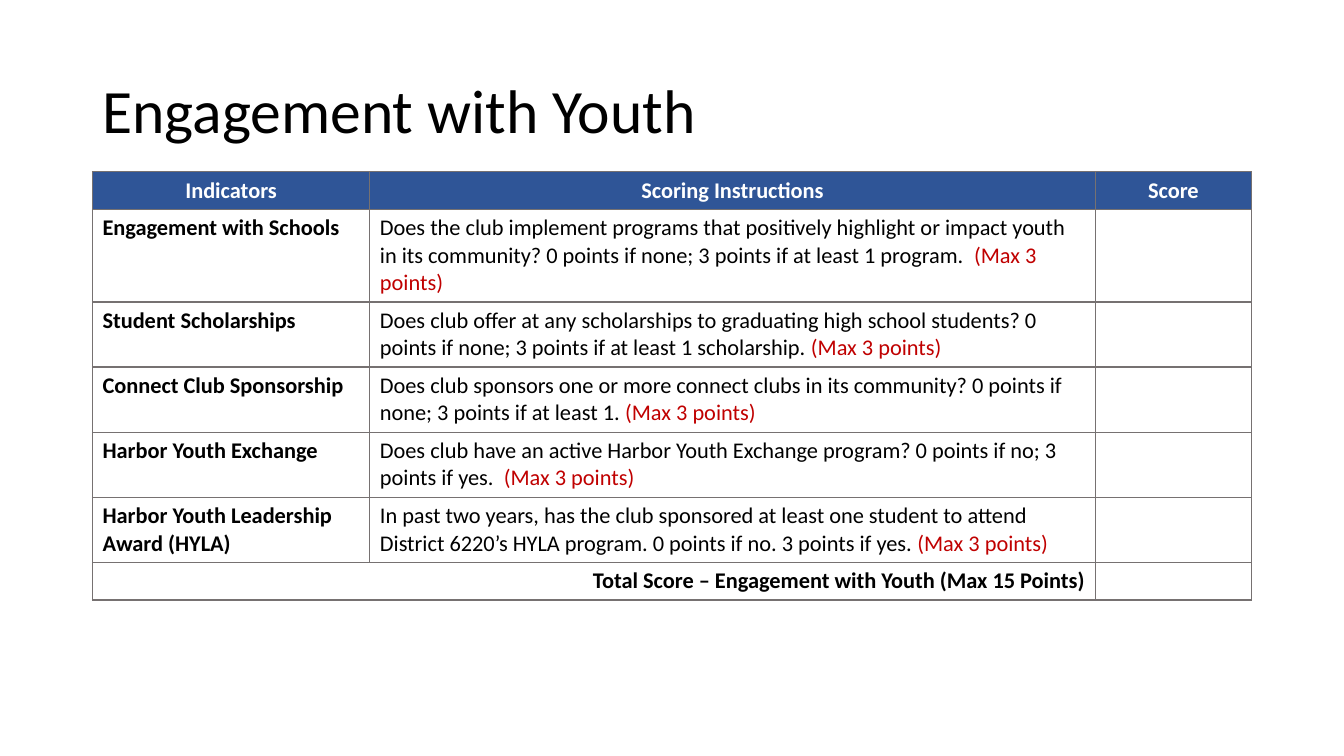
from lxml import etree
from pptx import Presentation
from pptx.dml.color import RGBColor as Rgb
from pptx.enum.text import MSO_ANCHOR as Anchor, PP_ALIGN as Align
from pptx.oxml.ns import qn
from pptx.util import Cm, Pt

TITLE = "Engagement with Youth"
HEADS = ("Indicators", "Scoring Instructions", "Score")
LIMIT = "(Max 3 points)"
ITEMS = [
    ("Engagement with Schools",
     "Does the club implement programs that positively highlight or impact "
     "youth in its community? 0 points if none; 3 points if at least "
     "1 program.  "),
    ("Student Scholarships",
     "Does club offer at any scholarships to graduating high school students? "
     "0 points if none; 3 points if at least 1 scholarship. "),
    ("Connect Club Sponsorship",
     "Does club sponsors one or more connect clubs in its community? "
     "0 points if none; 3 points if at least 1. "),
    ("Harbor Youth Exchange",
     "Does club have an active Harbor Youth Exchange program? "
     "0 points if no; 3 points if yes.  "),
    ("Harbor Youth Leadership Award (HYLA)",
     "In past two years, has the club sponsored at least one student to attend "
     "District 6220’s HYLA program. 0 points if no. 3 points if yes. "),
]
TOTAL = "Total Score – Engagement with Youth (Max 15 Points)"

COLORS = {"head": "2F5597", "light": "FFFFFF", "text": "000000",
          "limit": "C00000", "line": "767171"}
FONT = "Calibri"
SIZE = 16
LEFT, WIDTH = 2.33, 29.21
COLS = (6.99, 18.28, 3.94)
ROWS = [0.95, 2.33] + [1.64] * 4 + [0.95]


def write(para, text, color="text", bold=False, size=SIZE):
    run = para.add_run()
    run.text = text
    font = run.font
    font.name, font.size, font.bold = FONT, Pt(size), bold
    font.color.rgb = Rgb.from_string(COLORS[color])


def frame(cell):
    """Put a thin line on all four sides of a cell, beneath its fill."""
    props = cell._tc.get_or_add_tcPr()
    for place, side in enumerate(("lnL", "lnR", "lnT", "lnB")):
        line = etree.Element(qn("a:" + side), w=str(Pt(1)))
        fill = etree.SubElement(line, qn("a:solidFill"))
        etree.SubElement(fill, qn("a:srgbClr"), val=COLORS["line"])
        props.insert(place, line)


def main():
    deck = Presentation()
    deck.slide_width, deck.slide_height = Cm(33.87), Cm(19.05)
    slide = deck.slides.add_slide(deck.slide_layouts[6])

    box = slide.shapes.add_textbox(Cm(LEFT), Cm(1.01), Cm(WIDTH), Cm(3.68))
    box.text_frame.word_wrap = True
    box.text_frame.vertical_anchor = Anchor.MIDDLE
    title = box.text_frame.paragraphs[0]
    title.line_spacing = 0.9
    write(title, TITLE, size=44)

    table = slide.shapes.add_table(
        len(ROWS), len(COLS), Cm(LEFT), Cm(4.33), Cm(WIDTH), Cm(sum(ROWS))).table
    table.horz_banding = False
    for col, width in zip(table.columns, COLS):
        col.width = Cm(width)
    for row, height in zip(table.rows, ROWS):
        row.height = Cm(height)

    for cell in table.iter_cells():
        cell.fill.background()
        frame(cell)
        para = cell.text_frame.paragraphs[0]
        etree.SubElement(para._p, qn("a:endParaRPr"), sz=str(SIZE * 100))

    for col, head in enumerate(HEADS):
        cell = table.cell(0, col)
        cell.fill.solid()
        cell.fill.fore_color.rgb = Rgb.from_string(COLORS["head"])
        para = cell.text_frame.paragraphs[0]
        para.alignment = Align.CENTER
        write(para, head, "light", True)

    for row, (name, rule) in enumerate(ITEMS, 1):
        write(table.cell(row, 0).text_frame.paragraphs[0], name, bold=True)
        para = table.cell(row, 1).text_frame.paragraphs[0]
        write(para, rule)
        write(para, LIMIT, "limit")

    last = len(ROWS) - 1
    cell = table.cell(last, 0)
    cell.merge(table.cell(last, 1))
    para = cell.text_frame.paragraphs[0]
    para.alignment = Align.RIGHT
    write(para, TOTAL, bold=True)

    deck.save("out.pptx")


if __name__ == "__main__":
    main()
